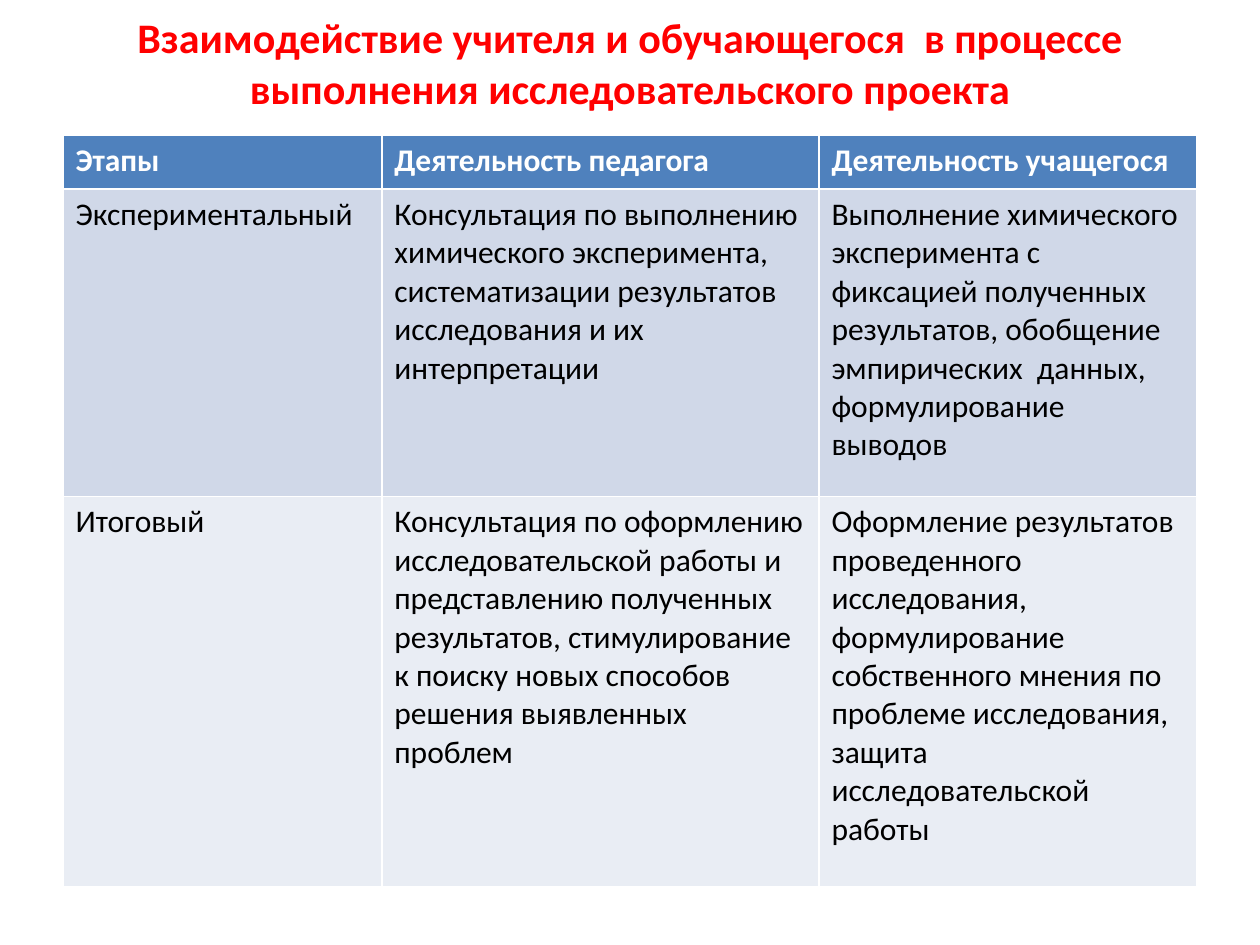
import pptx
import pptx.util
import pptx.dml.color
import pptx.enum.text

Inches = pptx.util.Inches
Pt = pptx.util.Pt
RGBColor = pptx.dml.color.RGBColor

RED = RGBColor(0xFF, 0x00, 0x00)
WHITE = RGBColor(0xFF, 0xFF, 0xFF)
BLACK = RGBColor(0x00, 0x00, 0x00)
HEADER_BLUE = RGBColor(0x4F, 0x81, 0xBD)
BAND_DARK = RGBColor(0xD0, 0xD8, 0xE8)
BAND_LIGHT = RGBColor(0xE9, 0xED, 0xF4)
FONT = "Calibri"

HEADING = "Взаимодействие учителя и обучающегося  в процессе выполнения исследовательского проекта"
STAGES = [
    ("Этапы", "Деятельность педагога", "Деятельность учащегося"),
    (
        "Экспериментальный",
        "Консультация по выполнению химического эксперимента, "
        "систематизации результатов исследования и их интерпретации",
        "Выполнение химического эксперимента с фиксацией полученных результатов, "
        "обобщение эмпирических  данных, формулирование выводов",
    ),
    (
        "Итоговый",
        "Консультация по оформлению исследовательской работы и представлению "
        "полученных результатов, стимулирование к поиску новых способов "
        "решения выявленных проблем",
        "Оформление результатов проведенного исследования, формулирование "
        "собственного мнения по проблеме исследования, защита "
        "исследовательской работы",
    ),
]
COLUMN_WIDTHS = [2.53, 3.47, 3]
ROW_HEIGHTS = [0.43, 2.44, 3.1]
ROW_STYLES = [
    (HEADER_BLUE, WHITE, True),
    (BAND_DARK, BLACK, False),
    (BAND_LIGHT, BLACK, False),
]
LEFT = 0.5
TABLE_TOP = 1.07


def write(paragraph, text, size, color, bold):
    run = paragraph.add_run()
    run.text = text
    run.font.name = FONT
    run.font.size = Pt(size)
    run.font.bold = bold
    run.font.color.rgb = color


def add_heading(slide):
    heading = slide.shapes.title
    heading.left, heading.top = Inches(LEFT), Inches(0)
    heading.width, heading.height = Inches(sum(COLUMN_WIDTHS)), Inches(0.99)
    frame = heading.text_frame
    frame.word_wrap = True
    frame.vertical_anchor = pptx.enum.text.MSO_ANCHOR.MIDDLE
    frame.paragraphs[0].alignment = pptx.enum.text.PP_ALIGN.CENTER
    write(frame.paragraphs[0], HEADING, 24, RED, True)


def add_stages(slide):
    stages = slide.shapes.add_table(
        len(STAGES), len(COLUMN_WIDTHS), Inches(LEFT), Inches(TABLE_TOP),
        Inches(sum(COLUMN_WIDTHS)), Inches(sum(ROW_HEIGHTS)),
    ).table
    for column, width in zip(stages.columns, COLUMN_WIDTHS):
        column.width = Inches(width)
    for row, height, texts, style in zip(stages.rows, ROW_HEIGHTS, STAGES, ROW_STYLES):
        row.height = Inches(height)
        fill, color, bold = style
        for cell, text in zip(row.cells, texts):
            cell.fill.solid()
            cell.fill.fore_color.rgb = fill
            write(cell.text_frame.paragraphs[0], text, 18, color, bold)


def main():
    deck = pptx.Presentation()
    deck.slide_width, deck.slide_height = Inches(10), Inches(7.5)
    slide = deck.slides.add_slide(deck.slide_layouts[5])
    add_heading(slide)
    add_stages(slide)
    deck.save("out.pptx")


if __name__ == "__main__":
    main()
